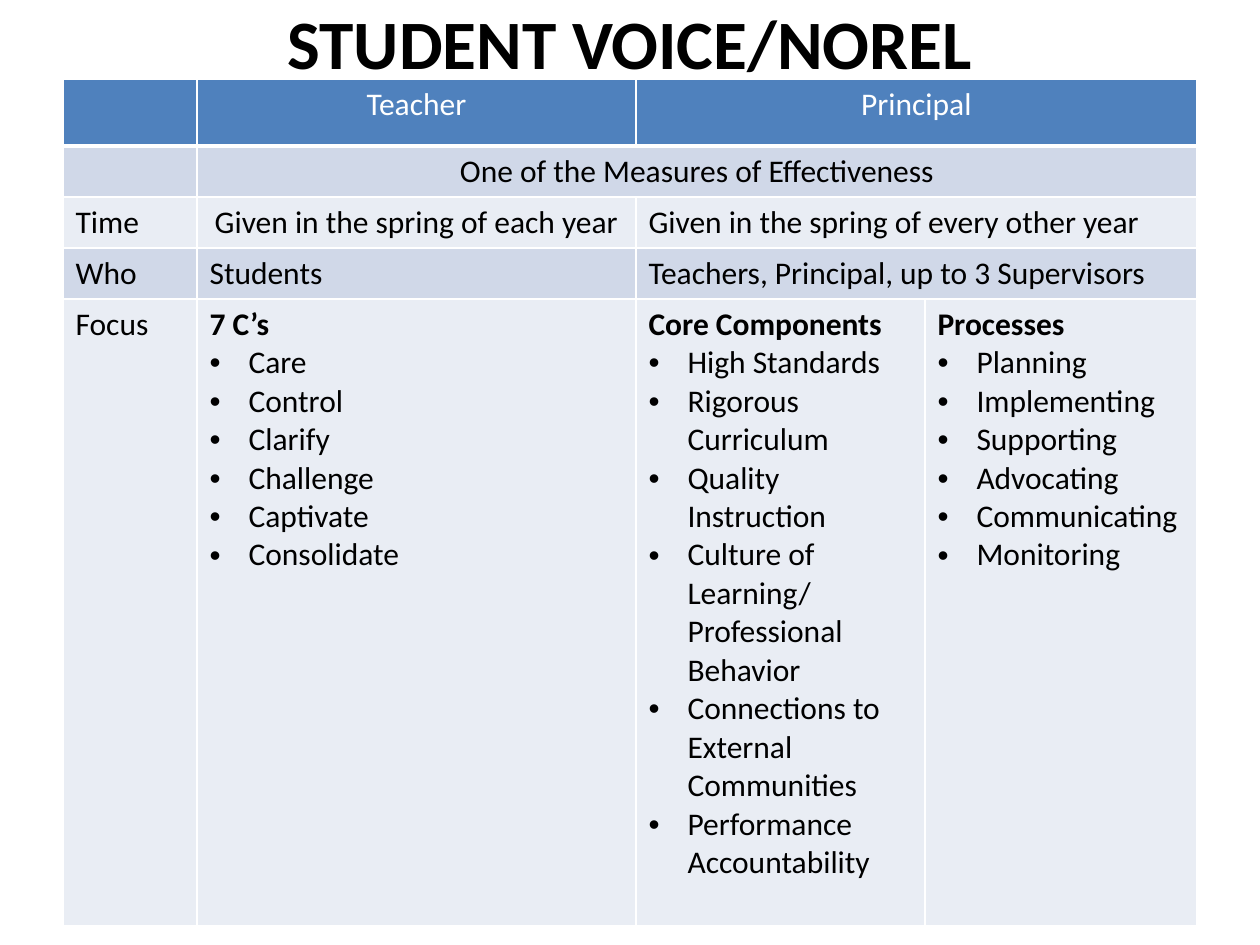
from dataclasses import dataclass

from lxml import etree
from pptx import Presentation
from pptx import util as u
from pptx.dml.color import RGBColor
from pptx.enum import text as t
from pptx.oxml.ns import qn


@dataclass(frozen=True)
class Theme:
    """Colours, font and type sizes of the slide."""
    font: str = "Calibri"
    title: float = 39.6
    body: int = 18
    ink: str = "000000"
    white: str = "FFFFFF"
    head: str = "4F81BD"
    dark: str = "D0D8E8"
    light: str = "E9EDF4"


LOOK = Theme()
COLS = [134, 439, 289, 272]
ROWS = [67, 51, 51, 51, 627]
CELLS = [
    ["", "Teacher", "Principal"],
    ["", "One of the Measures of Effectiveness"],
    ["Time", "Given in the spring of each year",
     "Given in the spring of every other year"],
    ["Who", "Students", "Teachers, Principal, up to 3 Supervisors"],
    ["Focus"],
]
LISTS = [
    ["7 C’s", "Care", "Control", "Clarify", "Challenge", "Captivate",
     "Consolidate"],
    ["Core Components", "High Standards", "Rigorous Curriculum",
     "Quality Instruction", "Culture of Learning/ Professional Behavior",
     "Connections to External Communities", "Performance Accountability"],
    ["Processes", "Planning", "Implementing", "Supporting", "Advocating",
     "Communicating", "Monitoring"],
]
MID = {(0, 1), (0, 2), (1, 1), (2, 1)}


def px(n):
    """Turn pixels into EMU."""
    return u.Emu(round(n * 914400 / 126))


def write(para, words, size=LOOK.body, color=LOOK.ink, bold=False,
          mid=False, dot=False):
    """Put formatted words into a paragraph."""
    run = para.add_run()
    run.text = words
    font = run.font
    font.name, font.size, font.bold = LOOK.font, u.Pt(size), bold
    font.color.rgb = RGBColor.from_string(color)
    para.alignment = t.PP_ALIGN.CENTER if mid else t.PP_ALIGN.LEFT
    if dot:
        prop = para._p.get_or_add_pPr()
        prop.set("marL", str(px(39)))
        prop.set("indent", str(-px(39)))
        etree.SubElement(prop, qn("a:buFont"), typeface="Arial")
        etree.SubElement(prop, qn("a:buChar"), char="•")


def paint(cell, color, base=1):
    """Fill a cell and draw its white borders."""
    prop = cell._tc.get_or_add_tcPr()
    for side, wide in zip("LRTB", (1, 1, 1, base)):
        line = etree.SubElement(prop, qn("a:ln" + side), w=str(u.Pt(wide)))
        fill = etree.SubElement(line, qn("a:solidFill"))
        etree.SubElement(fill, qn("a:srgbClr"), val=LOOK.white)
    cell.fill.solid()
    cell.fill.fore_color.rgb = RGBColor.from_string(color)


def title(slide, box, words):
    """Place the heading in its box."""
    frame = slide.shapes.add_textbox(*map(px, box)).text_frame
    frame.word_wrap = True
    frame.margin_top = frame.margin_bottom = 0
    write(frame.paragraphs[0], words, size=LOOK.title, bold=True, mid=True)


def bullets(cell, items):
    """Write a bold head with bulleted items below it."""
    frame = cell.text_frame
    write(frame.paragraphs[0], items[0], bold=True)
    for item in items[1:]:
        write(frame.add_paragraph(), item, dot=True)


def grid(slide, left, top):
    """Place the table that compares teacher and principal."""
    table = slide.shapes.add_table(
        len(ROWS), len(COLS), px(left), px(top),
        px(sum(COLS)), px(sum(ROWS))).table
    for col, wide in zip(table.columns, COLS):
        col.width = px(wide)
    for row, high in zip(table.rows, ROWS):
        row.height = px(high)
    for r in range(len(ROWS)):
        fill = LOOK.dark if r % 2 else LOOK.light
        for c in range(len(COLS)):
            paint(table.cell(r, c), fill if r else LOOK.head, 1 if r else 3)
    for r, c in ((0, 2), (1, 1), (2, 2), (3, 2)):
        table.cell(r, c).merge(table.cell(r, 3))
    for r, row in enumerate(CELLS):
        for c, words in enumerate(row):
            if words:
                write(table.cell(r, c).text_frame.paragraphs[0], words,
                      color=LOOK.ink if r else LOOK.white, mid=(r, c) in MID)
    for c, items in enumerate(LISTS, 1):
        bullets(table.cell(4, c), items)


def main():
    """Build and save the slide."""
    deck = Presentation()
    deck.slide_width, deck.slide_height = px(1260), px(945)
    slide = deck.slides.add_slide(deck.slide_layouts[6])
    title(slide, (63, 0, 1134, 75), "STUDENT VOICE/NOREL")
    grid(slide, 63, 79)
    deck.save("out.pptx")


if __name__ == "__main__":
    main()
